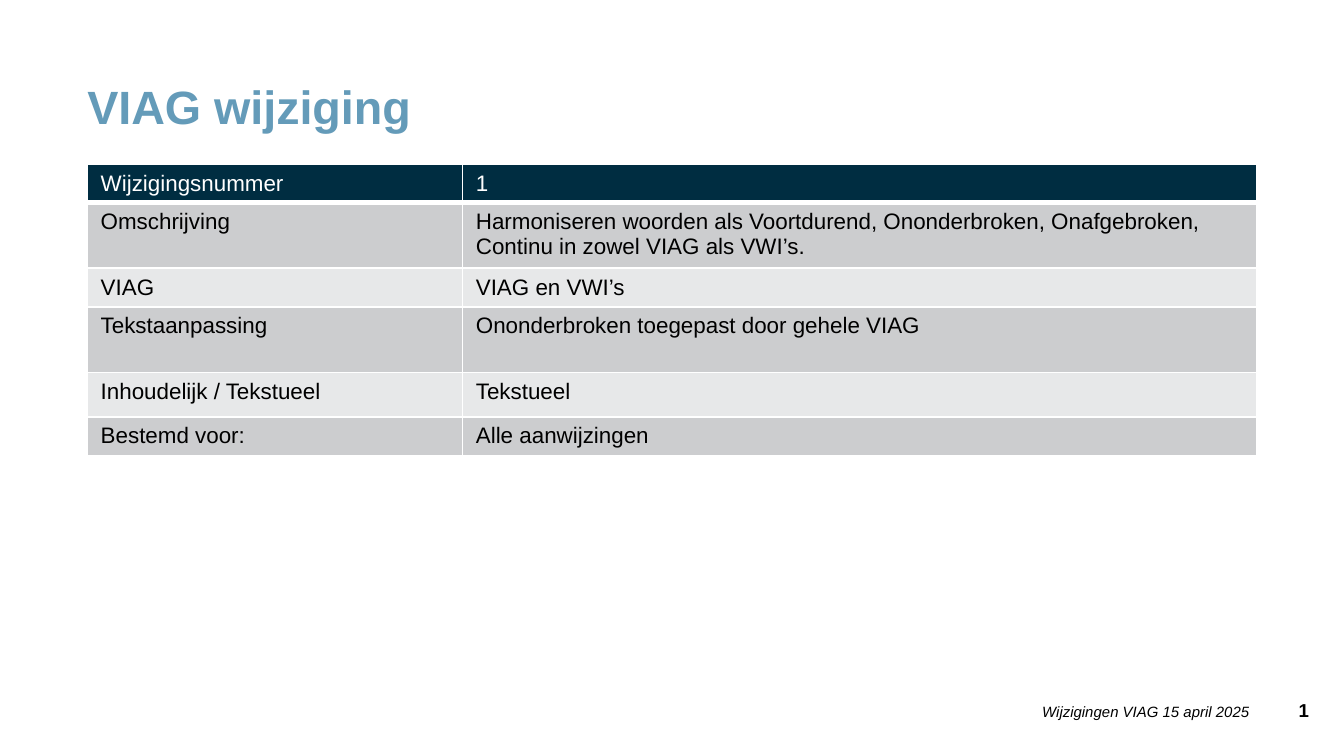
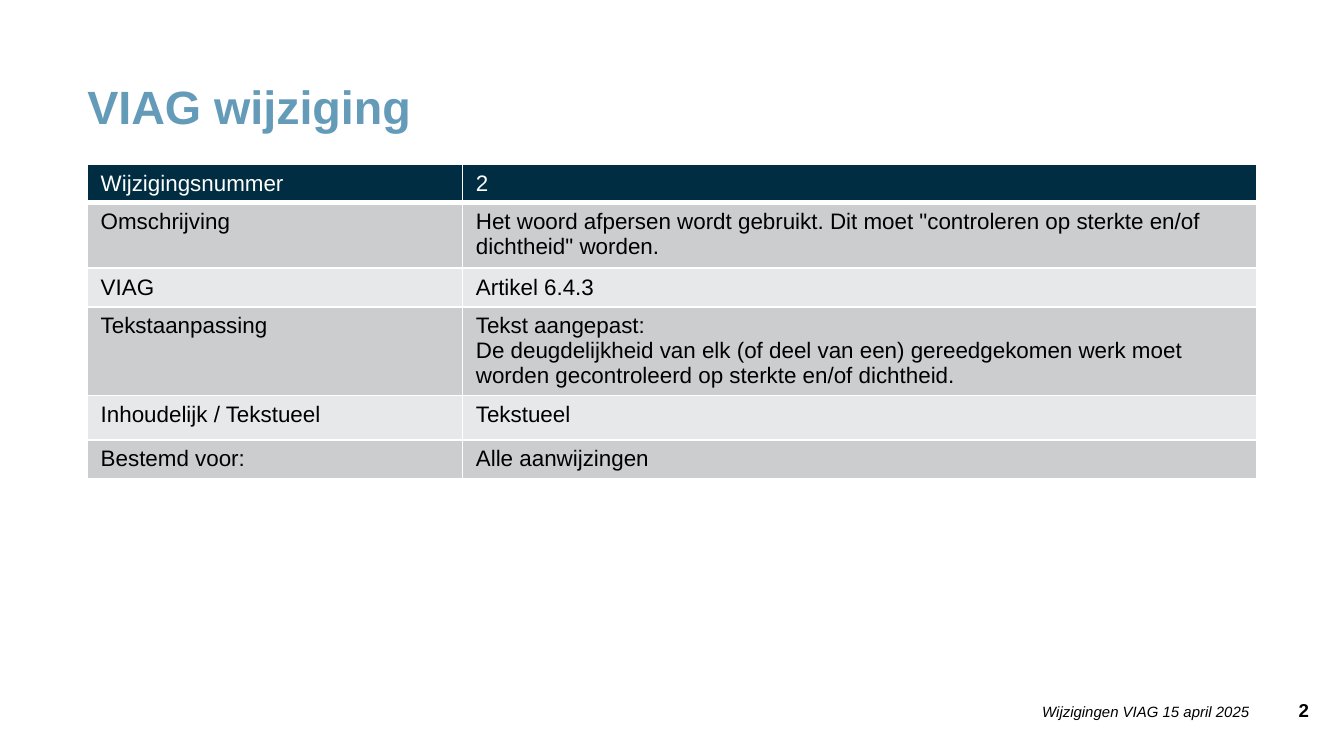
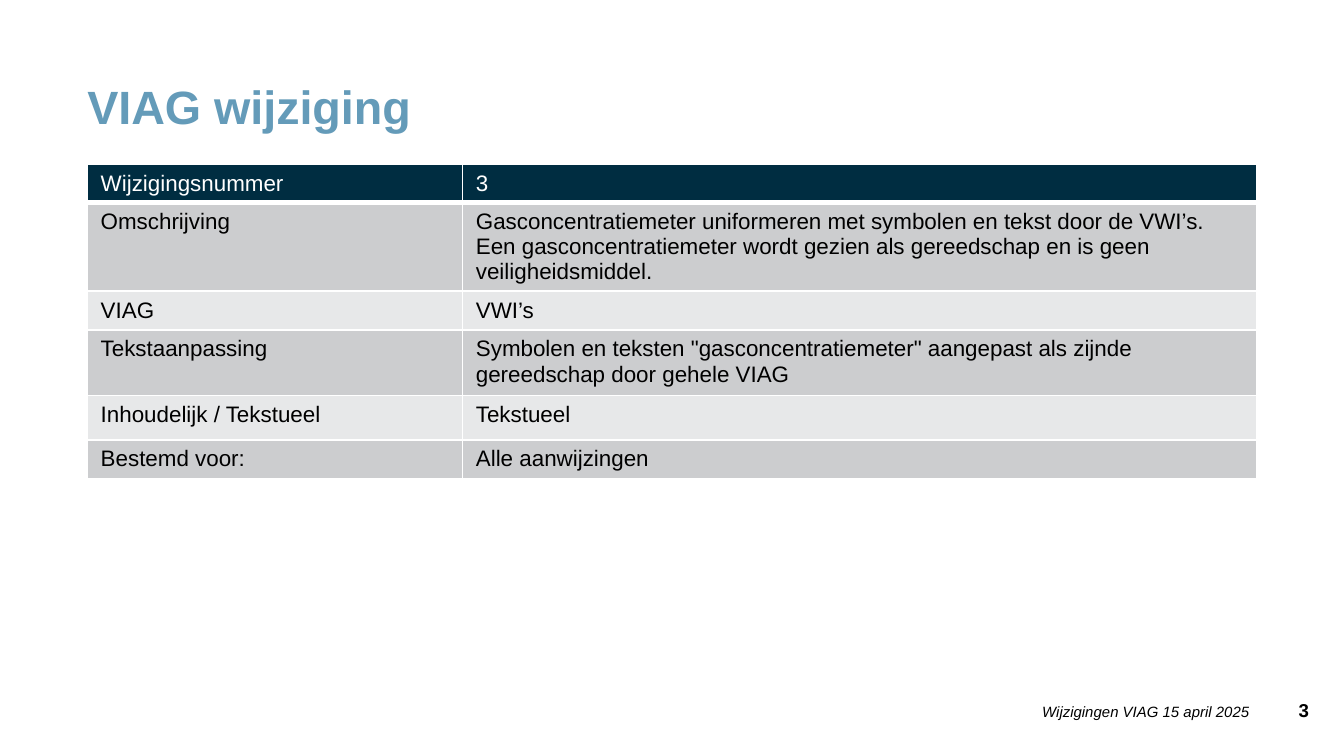
from lxml import etree
from pptx import Presentation
from pptx.dml.color import RGBColor
from pptx.enum.text import MSO_ANCHOR, MSO_AUTO_SIZE, PP_ALIGN
from pptx.oxml.ns import qn
from pptx.util import Cm, Pt

# Shared style
FONT = "Arial"
BLUE = RGBColor(0x64, 0x9B, 0xB9)
NAVY = RGBColor(0x00, 0x2D, 0x41)
DARK_BAND = RGBColor(0xCC, 0xCD, 0xCF)
LIGHT_BAND = RGBColor(0xE7, 0xE8, 0xE9)
BLACK = RGBColor(0, 0, 0)
WHITE = RGBColor(0xFF, 0xFF, 0xFF)

TITLE = "VIAG wijziging"
FOOTER = "Wijzigingen VIAG 15 april 2025"
LEFT = Cm(1.65)
COL_WIDTHS = [Cm(7.09), Cm(15.01)]
ROW_HEIGHTS = [Cm(h) for h in (0.71, 1.24, 0.71, 1.24, 0.84, 0.71)]
LABELS = ["Wijzigingsnummer", "Omschrijving", "VIAG", "Tekstaanpassing",
          "Inhoudelijk / Tekstueel", "Bestemd voor:"]

# Per change: description, place in VIAG, text adjustment
CHANGES = [
    ("Harmoniseren woorden als Voortdurend, Ononderbroken, Onafgebroken, "
     "Continu in zowel VIAG als VWI’s.",
     "VIAG en VWI’s",
     "Ononderbroken toegepast door gehele VIAG"),
    ('Het woord afpersen wordt gebruikt. Dit moet "controleren op sterkte '
     'en/of dichtheid" worden.',
     "Artikel 6.4.3",
     "Tekst aangepast:\vDe deugdelijkheid van elk (of deel van een) "
     "gereedgekomen werk moet worden gecontroleerd op sterkte en/of dichtheid."),
    ("Gasconcentratiemeter uniformeren met symbolen en tekst door de VWI’s.\n"
     "Een gasconcentratiemeter wordt gezien als gereedschap en is geen "
     "veiligheidsmiddel.",
     "VWI’s",
     'Symbolen en teksten "gasconcentratiemeter" aangepast als zijnde '
     "gereedschap door gehele VIAG"),
]


def write(tf, text, size, color, bold=False, italic=False):
    tf.text = text
    for p in tf.paragraphs:
        for r in p.runs:
            font = r.font
            font.name, font.size = FONT, Pt(size)
            font.bold, font.italic = bold, italic
            font.color.rgb = color


def clear_frame(tf):
    tf.margin_left = tf.margin_top = tf.margin_right = tf.margin_bottom = 0
    tf.word_wrap = True
    tf.auto_size = MSO_AUTO_SIZE.NONE
    tf.vertical_anchor = MSO_ANCHOR.TOP


def add_title(slide):
    sp = slide.shapes.title
    sp.left, sp.top, sp.width, sp.height = LEFT, Cm(1.55), Cm(20), Cm(2)
    clear_frame(sp.text_frame)
    write(sp.text_frame, TITLE, 25, BLUE, bold=True)
    p = sp.text_frame.paragraphs[0]
    p.alignment = PP_ALIGN.LEFT
    p.line_spacing = 0.95


def add_right_text(slide, text, left, top, width, size, **style):
    tf = slide.shapes.add_textbox(left, top, width, Cm(0.6)).text_frame
    clear_frame(tf)
    write(tf, text, size, BLACK, **style)
    tf.paragraphs[0].alignment = PP_ALIGN.RIGHT


def set_borders(cell, bottom):
    tc_pr = cell._tc.get_or_add_tcPr()
    for side, width in (("L", 1), ("R", 1), ("T", 1), ("B", bottom)):
        ln = etree.SubElement(tc_pr, qn(f"a:ln{side}"), w=str(Pt(width)))
        fill = etree.SubElement(ln, qn("a:solidFill"))
        etree.SubElement(fill, qn("a:srgbClr"), val=str(WHITE))


def add_change_table(slide, values):
    table = slide.shapes.add_table(
        len(LABELS), 2, LEFT, Cm(3.1), sum(COL_WIDTHS), sum(ROW_HEIGHTS)).table
    for column, width in zip(table.columns, COL_WIDTHS):
        column.width = width
    for i, (row, height) in enumerate(zip(table.rows, ROW_HEIGHTS)):
        row.height = height
        header = i == 0
        band = NAVY if header else DARK_BAND if i % 2 else LIGHT_BAND
        for cell, text in zip(row.cells, (LABELS[i], values[i])):
            set_borders(cell, bottom=3 if header else 1)
            cell.fill.solid()
            cell.fill.fore_color.rgb = band
            write(cell.text_frame, text, 12, WHITE if header else BLACK)


def main():
    prs = Presentation()
    prs.slide_width, prs.slide_height = Cm(25.4), Cm(14.29)
    for number, change in enumerate(CHANGES, 1):
        slide = prs.slides.add_slide(prs.slide_layouts[5])
        add_title(slide)
        add_change_table(
            slide, [str(number), *change, "Tekstueel", "Alle aanwijzingen"])
        # Footer and page number
        add_right_text(slide, FOOTER, Cm(19.66), Cm(13.28), Cm(3.96), 8,
                       italic=True)
        add_right_text(slide, str(number), Cm(23.75), Cm(13.21), Cm(0.99), 10,
                       bold=True)
    prs.save("out.pptx")


if __name__ == "__main__":
    main()
